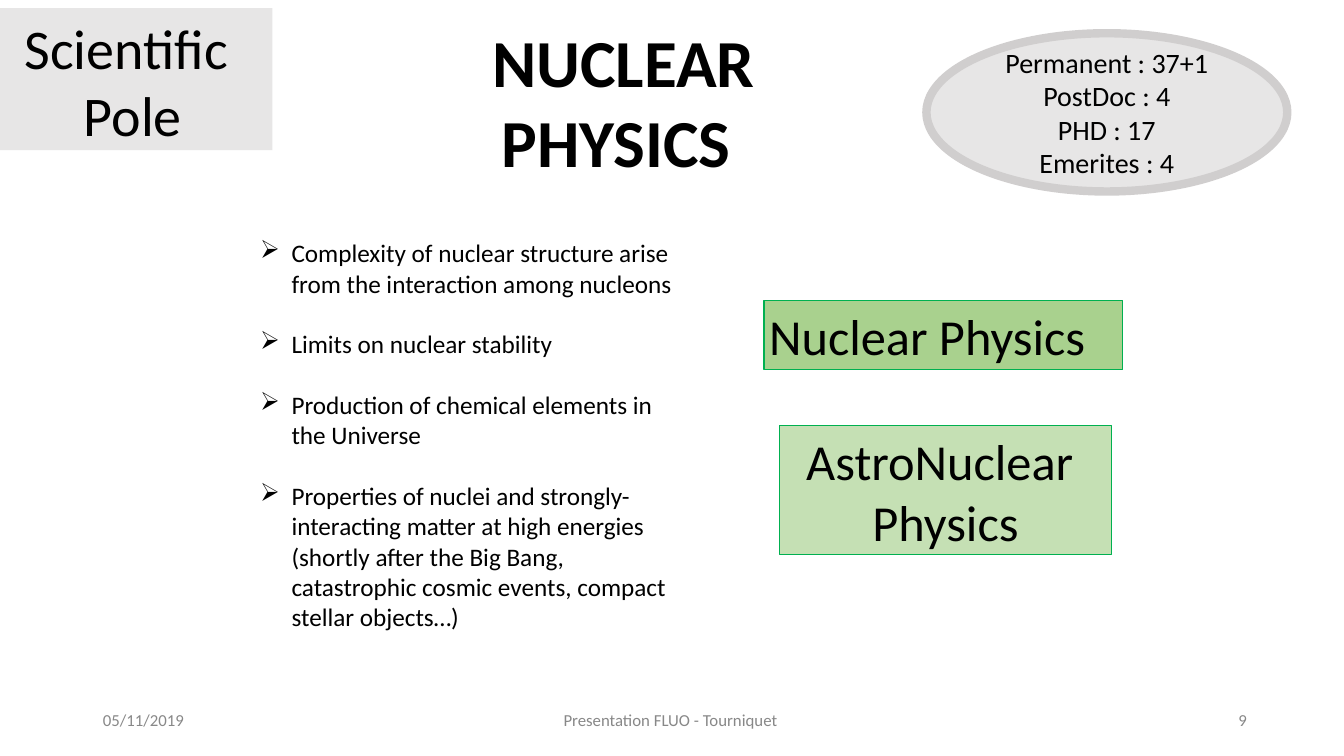
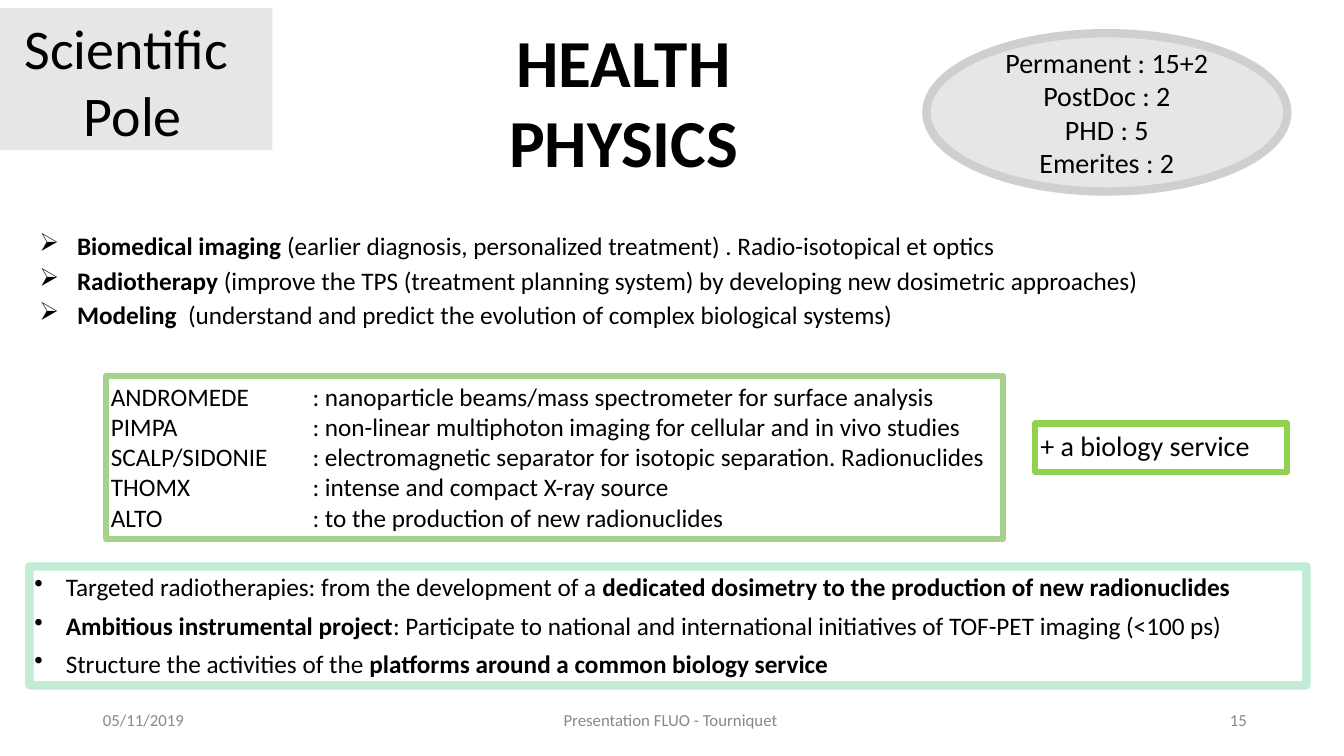
from pptx import Presentation
from pptx.dml.color import RGBColor
from pptx.enum.shapes import MSO_SHAPE
from pptx.enum.text import MSO_ANCHOR, MSO_AUTO_SIZE, PP_ALIGN
from pptx.oxml.ns import qn
from pptx.util import Inches, Pt
from lxml.etree import SubElement

BLACK = RGBColor(0x00, 0x00, 0x00)
GREY = RGBColor(0x88, 0x88, 0x88)
PALE = RGBColor(0xE7, 0xE6, 0xE6)
SILVER = RGBColor(0xD0, 0xCE, 0xCE)
GREEN = RGBColor(0x00, 0xB0, 0x50)
LEAF = RGBColor(0xA9, 0xD1, 0x8E)
MINT = RGBColor(0xC5, 0xE0, 0xB4)
LIME = RGBColor(0x92, 0xD0, 0x50)
FONT = "Calibri"
LEFT, CENTER, RIGHT = PP_ALIGN.LEFT, PP_ALIGN.CENTER, PP_ALIGN.RIGHT
TOP, MIDDLE = MSO_ANCHOR.TOP, MSO_ANCHOR.MIDDLE

prs = Presentation()
prs.slide_width, prs.slide_height = Inches(13.33), Inches(7.5)
COL, ROW = prs.slide_width / 100, prs.slide_height / 100


def place(s, box, preset=None, fill=None, line=None, width=0):
    x, y, w, h = int(box[0] * COL), int(box[1] * ROW), int(box[2] * COL), int(box[3] * ROW)
    if preset is None:
        return s.shapes.add_textbox(x, y, w, h)
    sp = s.shapes.add_shape(preset, x, y, w, h)
    sp.shadow.inherit = False
    if fill is None:
        sp.fill.background()
    else:
        sp.fill.solid()
        sp.fill.fore_color.rgb = fill
    if line is None:
        sp.line.fill.background()
    else:
        sp.line.color.rgb = line
        sp.line.width = Pt(width)
    return sp


def write(sp, paras, size, color=BLACK, align=LEFT, anchor=TOP, bold=False,
          bullet=None, indent=0, before=0, after=0, tab=0):
    tf = sp.text_frame
    tf.word_wrap = True
    tf.auto_size = MSO_AUTO_SIZE.NONE
    tf.vertical_anchor = anchor
    tf.margin_left = tf.margin_right = tf.margin_top = tf.margin_bottom = Inches(0.05)
    for i, runs in enumerate(paras):
        p = tf.paragraphs[0] if i == 0 else tf.add_paragraph()
        p.alignment = align
        p.space_before, p.space_after = Pt(before), Pt(after)
        pPr = p._p.get_or_add_pPr()
        if bullet:
            pPr.set("marL", str(int(indent * COL)))
            pPr.set("indent", str(int(-indent * COL)))
            SubElement(pPr, qn("a:buChar"), char=bullet)
        if tab:
            tabs = SubElement(pPr, qn("a:tabLst"))
            SubElement(tabs, qn("a:tab"), pos=str(int(tab * COL)), algn="l")
        for text, strong in [(runs, bold)] if isinstance(runs, str) else runs:
            r = p.add_run()
            r.text = text
            r.font.name, r.font.size, r.font.bold = FONT, Pt(size), strong
            r.font.color.rgb = color


slides = []
for title, number, staff in [
    (["NUCLEAR", "PHYSICS "], "9", ["37+1", "4", "17", "4"]),
    (["HEALTH", "PHYSICS"], "15", ["15+2", "2", "5", "2"]),
]:
    s = prs.slides.add_slide(prs.slide_layouts[5])
    slides.append(s)
    sp = s.shapes.title
    sp.left, sp.top = int(34.4 * COL), int(2 * ROW)
    sp.width, sp.height = int(24 * COL), int(22 * ROW)
    write(sp, title, 48, align=CENTER, bold=True)

    sp = place(s, (-0.53, 1.07, 20.8, 18.8), MSO_SHAPE.RECTANGLE, PALE)
    write(sp, ["Scientific ", "Pole"], 40, align=CENTER)

    sp = place(s, (68.93, 4.4, 26.85, 20.93), MSO_SHAPE.OVAL, PALE, SILVER, 6)
    roles = ["Permanent", "PostDoc", "PHD", "Emerites"]
    write(sp, [f"{role} : {n}" for role, n in zip(roles, staff)], 20, align=CENTER, anchor=MIDDLE)

    for x, w, text, align in [
        (7.28, 21.75, "05/11/2019", LEFT),
        (33.53, 33, "Presentation FLUO - Tourniquet ", CENTER),
        (85.65, 7.5, number, RIGHT),
    ]:
        write(place(s, (x, 93.33, w, 3.87)), [text], 12, GREY, align, MIDDLE)

nuclear, health = slides

write(place(nuclear, (18.98, 30.8, 32.85, 55.7)), [
    "Complexity of nuclear structure arise from the interaction among nucleons",
    "Limits on nuclear stability",
    "Production of chemical elements in the Universe",
    "Properties of nuclei and strongly-interacting matter at high energies (shortly after "
    "the Big Bang, catastrophic cosmic events, compact stellar objects…)",
], 18, bullet="➢", indent=2.34, after=21.8)

for box, fill, lines, align in [
    ((56.85, 39.73, 26.7, 9.2), LEAF, ["Nuclear Physics"], LEFT),
    ((57.98, 56.27, 24.75, 17.07), MINT, ["AstroNuclear ", "Physics"], CENTER),
]:
    sp = place(nuclear, box, MSO_SHAPE.RECTANGLE, fill, GREEN, 0.75)
    write(sp, lines, 36, align=align)

write(place(health, (2.55, 29.87, 95, 14.13)), [
    [("Biomedical imaging ", True),
     ("(earlier diagnosis, personalized treatment) . Radio-isotopical et optics", False)],
    [("Radiotherapy", True),
     (" (improve the TPS (treatment planning system) by developing new dosimetric approaches)", False)],
    [("Modeling ", True),
     (" (understand and predict the evolution of complex biological systems)", False)],
], 18, bullet="➢", indent=2.81, before=3)

sp = place(health, (7.88, 49.73, 66.75, 21.6), MSO_SHAPE.RECTANGLE, None, LEAF, 4.5)
write(sp, [
    "ANDROMEDE\t: nanoparticle beams/mass spectrometer for surface analysis",
    "PIMPA\t: non-linear multiphoton imaging for cellular and in vivo studies",
    "SCALP/SIDONIE\t: electromagnetic separator for isotopic separation. Radionuclides",
    "THOMX\t: intense and compact X-ray source",
    "ALTO\t: to the production of new radionuclides",
], 18, tab=15)

sp = place(health, (77.03, 56, 18.75, 6.4), MSO_SHAPE.RECTANGLE, None, LIME, 4.5)
write(sp, ["+ a biology service"], 20)

sp = place(health, (2.18, 74.93, 95.03, 15.73), MSO_SHAPE.RECTANGLE, None, GREEN, 6)
clr = sp.line._ln.find(".//" + qn("a:srgbClr"))
SubElement(clr, qn("a:alpha"), val="23000")
write(sp, [
    [("Targeted radiotherapies: from the development of a ", False),
     ("dedicated dosimetry to the production of new radionuclides", True)],
    [("Ambitious instrumental project", True),
     (": Participate to national and international initiatives of TOF-PET imaging (<100 ps)", False)],
    [("Structure the activities of the ", False),
     ("platforms around a common biology service", True)],
], 18, bullet="•", indent=2.34, before=6)

prs.save("out.pptx")
